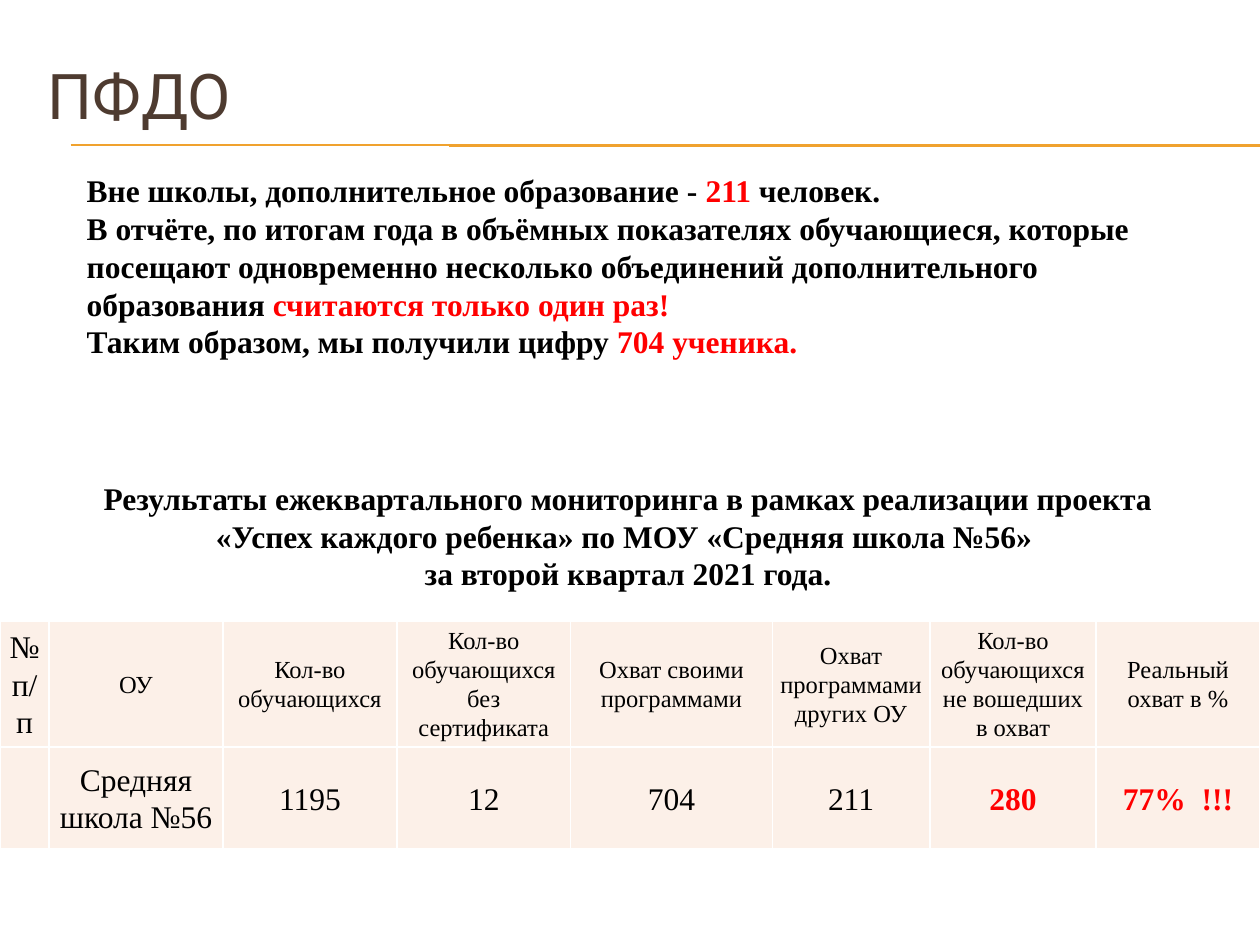
from lxml.etree import SubElement
from pptx import Presentation
from pptx.dml.color import RGBColor
from pptx.enum.shapes import MSO_CONNECTOR
from pptx.enum.text import MSO_ANCHOR, PP_ALIGN
from pptx.oxml.ns import qn
from pptx.util import Inches, Pt

BLACK, RED, WHITE = "000000", "FF0000", "FFFFFF"
BROWN, GOLD, CREAM = "4E3B30", "F0A22E", "FCF0E8"


def color(value):
    return RGBColor.from_string(value)


class SlideBuilder:
    font = "Times New Roman"
    size = 18

    def __init__(self, slide):
        self.s = slide

    def run(self, p, text, ink=BLACK, bold=False, size=None, font=None):
        r = p.add_run()
        r.text = text
        r.font.name = font or self.font
        r.font.size = Pt(size or self.size)
        r.font.bold = bold
        r.font.color.rgb = color(ink)

    def line(self, x1, x2, y):
        ln = self.s.shapes.add_connector(
            MSO_CONNECTOR.STRAIGHT, Inches(x1), Inches(y), Inches(x2), Inches(y))
        ln.line.color.rgb = color(GOLD)
        ln.line.width = Pt(0.75)
        SubElement(ln._element.spPr, qn("a:effectLst"))

    def text(self, box, paragraphs, align=PP_ALIGN.LEFT, anchor=MSO_ANCHOR.TOP, **style):
        sp = self.s.shapes.add_textbox(*map(Inches, box))
        tf = sp.text_frame
        tf.word_wrap = True
        tf.vertical_anchor = anchor
        for i, runs in enumerate(paragraphs):
            p = tf.add_paragraph() if i else tf.paragraphs[0]
            p.alignment = align
            for text, ink in runs:
                self.run(p, text, ink, **style)

    def borders(self, cell):
        tc_pr = cell._tc.get_or_add_tcPr()
        for i, side in enumerate(("lnL", "lnR", "lnT", "lnB")):
            ln = tc_pr.makeelement(qn(f"a:{side}"), {"w": str(Pt(1))})
            fill = SubElement(ln, qn("a:solidFill"))
            SubElement(fill, qn("a:srgbClr"), {"val": WHITE})
            tc_pr.insert(i, ln)

    def cell(self, cell, text, **style):
        cell.fill.solid()
        cell.fill.fore_color.rgb = color(CREAM)
        self.borders(cell)
        cell.vertical_anchor = MSO_ANCHOR.MIDDLE
        cell.margin_left = cell.margin_right = Inches(0.06)
        cell.margin_top = cell.margin_bottom = 0
        if text:
            p = cell.text_frame.paragraphs[0]
            p.alignment = PP_ALIGN.CENTER
            p.line_spacing = 1.07
            self.run(p, text, **style)

    def table(self, left, top, widths, heights, rows):
        table = self.s.shapes.add_table(
            len(rows), len(widths), Inches(left), Inches(top),
            Inches(sum(widths)), Inches(sum(heights))).table
        for col, width in zip(table.columns, widths):
            col.width = Inches(width)
        for row, height, values in zip(table.rows, heights, rows):
            row.height = Inches(height)
            for cell, (text, style) in zip(row.cells, values):
                self.cell(cell, text, **style)


def main():
    prs = Presentation()
    prs.slide_width, prs.slide_height = Inches(10), Inches(7.5)
    b = SlideBuilder(prs.slides.add_slide(prs.slide_layouts[6]))

    b.line(0.56, 10, 1.15)
    b.line(3.56, 10, 1.16)
    b.text((0.59, 1.31, 9.17, 2.22), [
        [("Вне школы, дополнительное образование - ", BLACK), ("211 ", RED),
         ("человек.", BLACK)],
        [("В отчёте, по итогам года в объёмных показателях обучающиеся, которые "
          "посещают одновременно несколько объединений дополнительного "
          "образования ", BLACK), ("считаются только один раз!", RED)],
        [("Таким образом, мы получили цифру ", BLACK), ("704 ученика.", RED)],
    ], bold=True)
    b.text((0.51, 3.75, 8.95, 1.01), [
        [("Результаты ежеквартального мониторинга в рамках реализации проекта", BLACK)],
        [("«Успех каждого ребенка» по МОУ «Средняя школа №56» ", BLACK)],
        [("за второй квартал 2021 года.", BLACK)],
    ], align=PP_ALIGN.CENTER, bold=True)

    headers = ["ОУ", "Кол-во обучающихся", "Кол-во обучающихся без сертификата",
               "Охват своими программами", "Охват программами других ОУ",
               "Кол-во обучающихся не вошедших в охват", "Реальный охват в %"]
    values = ["", "Средняя школа №56", "1195", "12", "704", "211"]
    results = ["280", "77%  !!!"]
    b.table(0, 4.93, [0.39, 1.38, 1.38, 1.38, 1.6, 1.25, 1.32, 1.3], [1, 0.81], [
        [("№ п/п", {})] + [(h, {"size": 14}) for h in headers],
        [(v, {}) for v in values] + [(v, {"ink": RED, "bold": True}) for v in results],
    ])
    b.text((0.28, 0.29, 9.5, 0.92), [[("ПФДО", BROWN)]],
           anchor=MSO_ANCHOR.MIDDLE, size=36, font="Roboto")
    prs.save("out.pptx")


if __name__ == "__main__":
    main()
